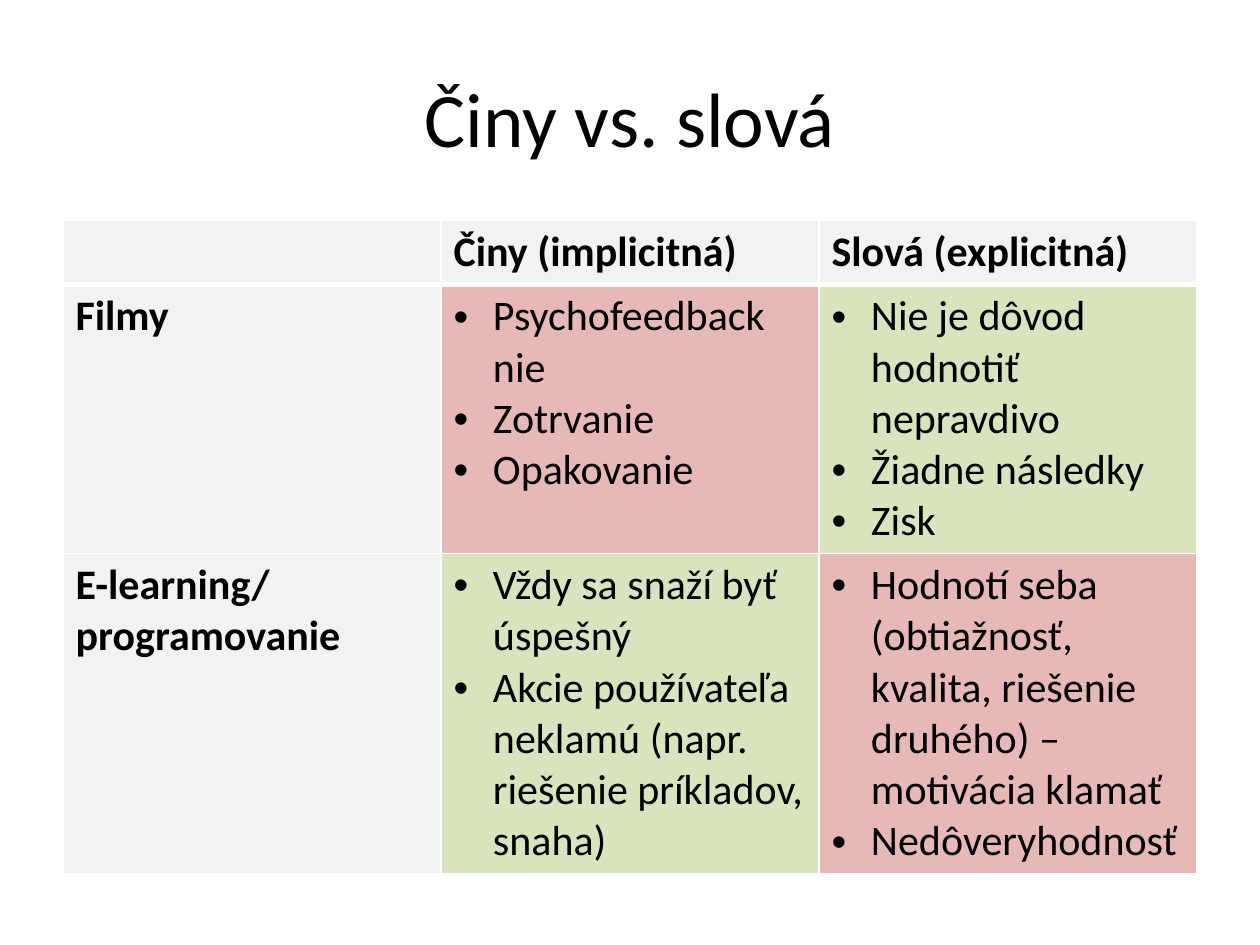
"""Build a slide with a table that compares actions and words."""
import pptx
import pptx.dml.color
import pptx.enum.text
import pptx.oxml
import pptx.oxml.ns
import pptx.util

Cm = pptx.util.Cm
Pt = pptx.util.Pt

GREY, RED, GREEN = "F2F2F2", "E6B9B8", "D7E4BD"
BLACK, WHITE = "000000", "FFFFFF"

TITLE = "Činy vs. slová"
HEADERS = ["", "Činy (implicitná)", "Slová (explicitná)"]
TOPICS = [
    ("Filmy", [
        (RED, ["Psychofeedback nie", "Zotrvanie", "Opakovanie"]),
        (GREEN, ["Nie je dôvod hodnotiť nepravdivo", "Žiadne následky", "Zisk"]),
    ]),
    ("E-learning/ programovanie", [
        (GREEN, ["Vždy sa snaží byť úspešný",
                 "Akcie používateľa neklamú (napr. riešenie príkladov, snaha)"]),
        (RED, ["Hodnotí seba (obtiažnosť, kvalita, riešenie druhého) – motivácia klamať",
               "Nedôveryhodnosť"]),
    ]),
]

LEFT, WIDTH = Cm(1.27), Cm(22.86)
TITLE_TOP, TITLE_HEIGHT = Cm(0.76), Cm(3.18)
TABLE_TOP, TABLE_HEIGHT = Cm(4.45), Cm(12.95)
ROW_HEIGHT = Cm(1.04)
INDENT = Pt(22.5)


def rgb(colour):
    return pptx.dml.color.RGBColor.from_string(colour)


def write(frame, lines, size=24, bold=False, bullet=False, align=None):
    for index, line in enumerate(lines):
        paragraph = frame.add_paragraph() if index else frame.paragraphs[0]
        paragraph.alignment = align
        run = paragraph.add_run()
        run.text = line
        run.font.name = "Calibri"
        run.font.size = Pt(size)
        run.font.bold = bold
        run.font.color.rgb = rgb(BLACK)
        if bullet:
            properties = paragraph._p.get_or_add_pPr()
            properties.set("marL", str(INDENT))
            properties.set("indent", str(-INDENT))
            for tag, attribute, value in (("buFont", "typeface", "Arial"), ("buChar", "char", "•")):
                properties.append(pptx.oxml.parse_xml(
                    f'<a:{tag} {pptx.oxml.ns.nsdecls("a")} {attribute}="{value}"/>'))


def add_borders(cell, **widths):
    properties = cell._tc.get_or_add_tcPr()
    for position, side in enumerate("LRTB"):
        properties.insert(position, pptx.oxml.parse_xml(
            f'<a:ln{side} {pptx.oxml.ns.nsdecls("a")} w="{Pt(widths.get(side, 1))}">'
            f'<a:solidFill><a:srgbClr val="{WHITE}"/></a:solidFill></a:ln{side}>'))


def fill_cell(cell, lines, colour, borders, **text_format):
    cell.fill.solid()
    cell.fill.fore_color.rgb = rgb(colour)
    add_borders(cell, **borders)
    write(cell.text_frame, lines, **text_format)


def main():
    deck = pptx.Presentation()
    deck.slide_width, deck.slide_height = Cm(25.4), Cm(19.05)
    slide = deck.slides.add_slide(deck.slide_layouts[5])

    title = slide.shapes.title
    title.left, title.top, title.width, title.height = LEFT, TITLE_TOP, WIDTH, TITLE_HEIGHT
    title.text_frame.vertical_anchor = pptx.enum.text.MSO_ANCHOR.MIDDLE
    write(title.text_frame, [TITLE], size=44, align=pptx.enum.text.PP_ALIGN.CENTER)

    comparison = slide.shapes.add_table(
        len(TOPICS) + 1, len(HEADERS), LEFT, TABLE_TOP, WIDTH, TABLE_HEIGHT)
    grid = comparison.table
    for row in grid.rows:
        row.height = ROW_HEIGHT
    comparison.height = TABLE_HEIGHT

    for column, header in enumerate(HEADERS):
        fill_cell(grid.cell(0, column), [header] if header else [], GREY, {"B": 3}, bold=True)
    for row, (topic, opinions) in enumerate(TOPICS, start=1):
        top = {"T": 3} if row == 1 else {}
        fill_cell(grid.cell(row, 0), [topic], GREY, top, bold=True)
        for column, (colour, points) in enumerate(opinions, start=1):
            fill_cell(grid.cell(row, column), points, colour, top, bullet=True)

    deck.save("out.pptx")


if __name__ == "__main__":
    main()
